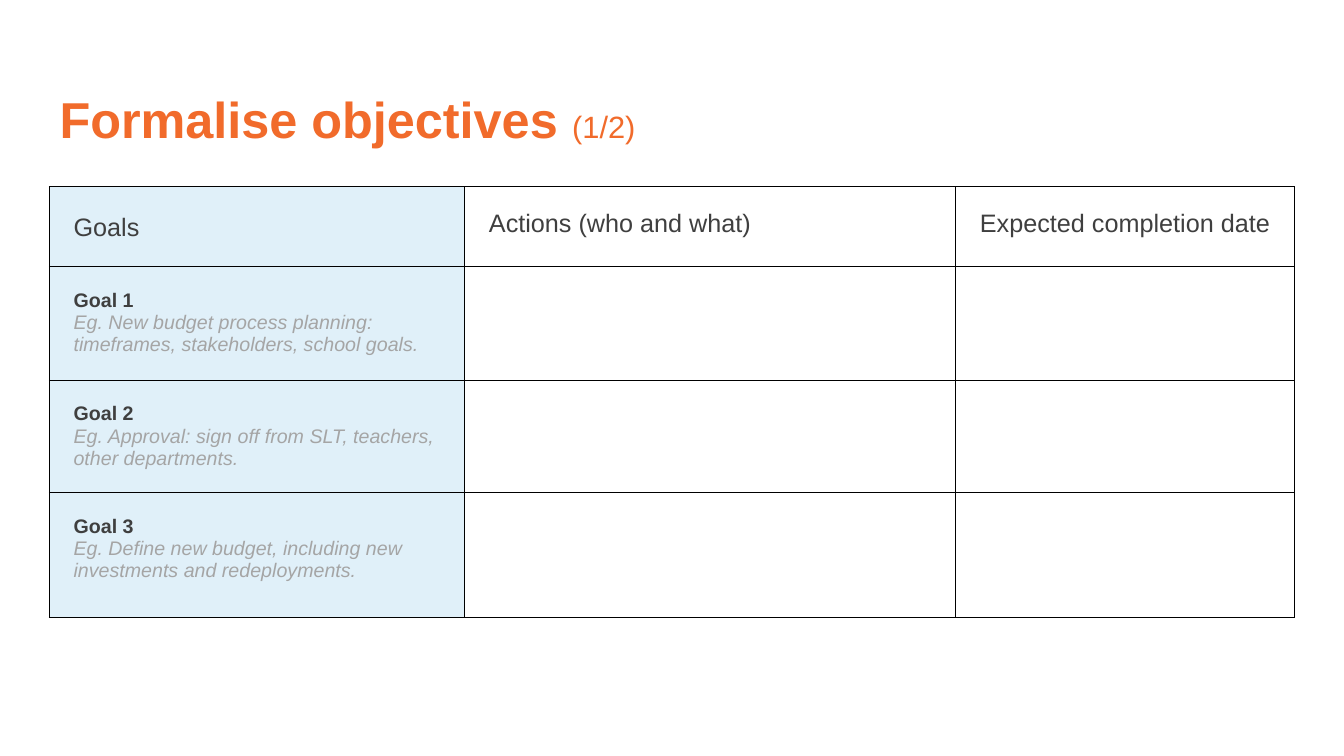
from pptx import Presentation
from pptx import util as u
from pptx.dml import color
from pptx.enum import text
from pptx.oxml import parse_xml
from pptx.oxml.ns import nsdecls

COLORS = {"orange": "F16B2B", "dark": "3F3F3F", "grey": "A5A5A5",
          "blue": "E0F0F9", "white": "FFFFFF", "border": "000000"}
COLUMN_WIDTHS = [4.12, 4.87, 3.36]
ROW_HEIGHTS = [0.79, 1.13, 1.12, 1.24]
HEADERS = ["Goals", "Actions (who and what)", "Expected completion date"]
EXAMPLES = [
    "Eg. New budget process planning: timeframes, stakeholders, school goals.",
    "Eg. Approval: sign off from SLT, teachers, other departments.",
    "Eg. Define new budget, including new investments and redeployments.",
]


def add_run(paragraph, words, size, color_name, bold=False, italic=False):
    run = paragraph.add_run()
    run.text = words
    run.font.name = "Arial"
    run.font.size = u.Pt(size)
    run.font.bold = bold
    run.font.italic = italic
    run.font.color.rgb = color.RGBColor.from_string(COLORS[color_name])


def format_cell(cell, fill_name):
    cell.margin_left = u.Inches(0.24)
    cell.margin_right = cell.margin_top = cell.margin_bottom = u.Inches(0.23)
    properties = cell._tc.get_or_add_tcPr()
    for side in ("lnL", "lnR", "lnT", "lnB"):
        properties.append(parse_xml(
            f'<a:{side} {nsdecls("a")} w="{u.Pt(0.75)}"><a:solidFill>'
            f'<a:srgbClr val="{COLORS["border"]}"/></a:solidFill></a:{side}>'))
    cell.fill.solid()
    cell.fill.fore_color.rgb = color.RGBColor.from_string(COLORS[fill_name])


presentation = Presentation()
presentation.slide_width = u.Inches(13.33)
presentation.slide_height = u.Inches(7.5)
slide = presentation.slides.add_slide(presentation.slide_layouts[5])

# Title
title = slide.shapes.title
title.left, title.top = u.Inches(0.49), u.Inches(0.49)
title.width, title.height = u.Inches(11.5), u.Inches(1.45)
title.text_frame.vertical_anchor = text.MSO_ANCHOR.MIDDLE
heading = title.text_frame.paragraphs[0]
heading.alignment = text.PP_ALIGN.LEFT
heading.line_spacing = 0.9
add_run(heading, "Formalise objectives ", 36, "orange", bold=True)
add_run(heading, "(1/2)", 22, "orange")

# Table grid
table = slide.shapes.add_table(
    len(ROW_HEIGHTS), len(COLUMN_WIDTHS), u.Inches(0.49), u.Inches(1.85),
    u.Inches(sum(COLUMN_WIDTHS)), u.Inches(sum(ROW_HEIGHTS))).table
table.first_row = False
table.horz_banding = False
for column, width in zip(table.columns, COLUMN_WIDTHS):
    column.width = u.Inches(width)
for row, height in zip(table.rows, ROW_HEIGHTS):
    row.height = u.Inches(height)
    for index, cell in enumerate(row.cells):
        format_cell(cell, "blue" if index == 0 else "white")

# Header row
for index, header in enumerate(HEADERS):
    paragraph = table.cell(0, index).text_frame.paragraphs[0]
    add_run(paragraph, header, 18, "dark")
table.cell(0, 0).text_frame.paragraphs[0].line_spacing = 1.15

# Goals with their examples
for number, example in enumerate(EXAMPLES, start=1):
    frame = table.cell(number, 0).text_frame
    add_run(frame.paragraphs[0], f"Goal {number}", 14, "dark", bold=True)
    add_run(frame.add_paragraph(), example, 14, "grey", italic=True)

presentation.save("out.pptx")
